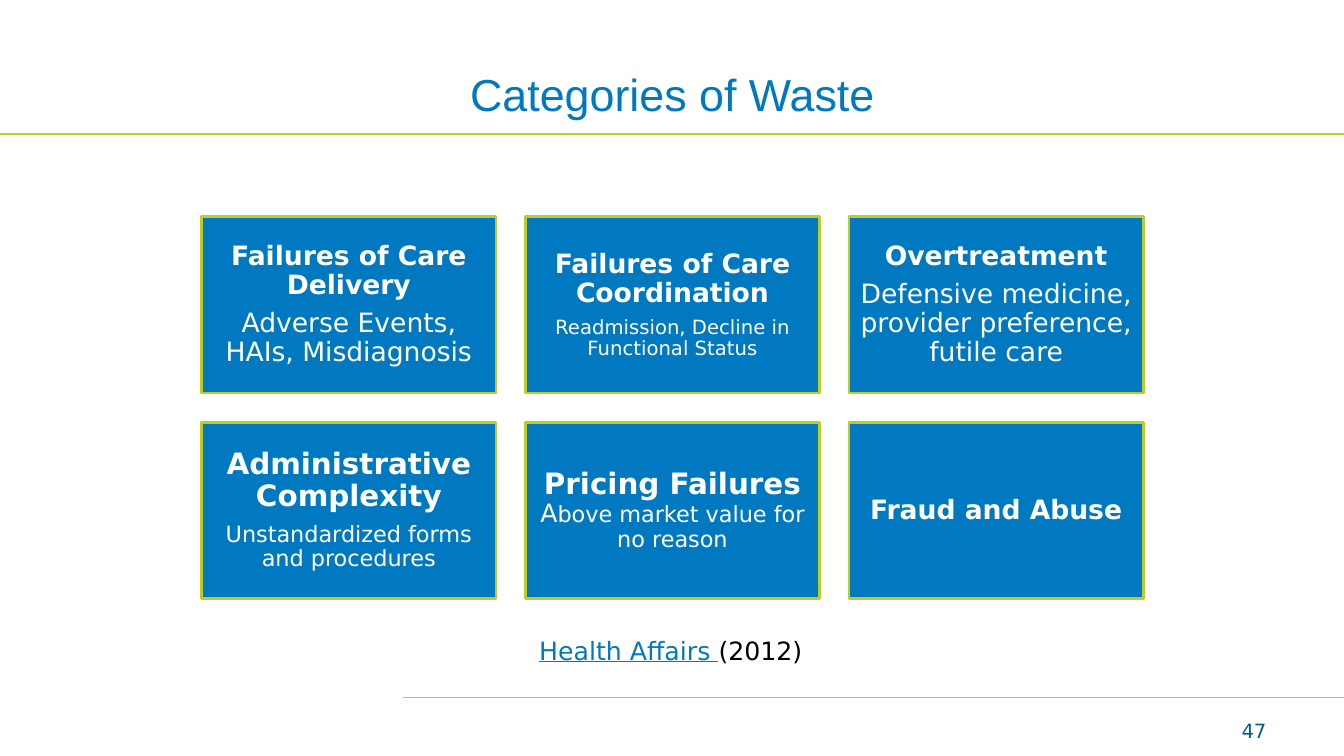
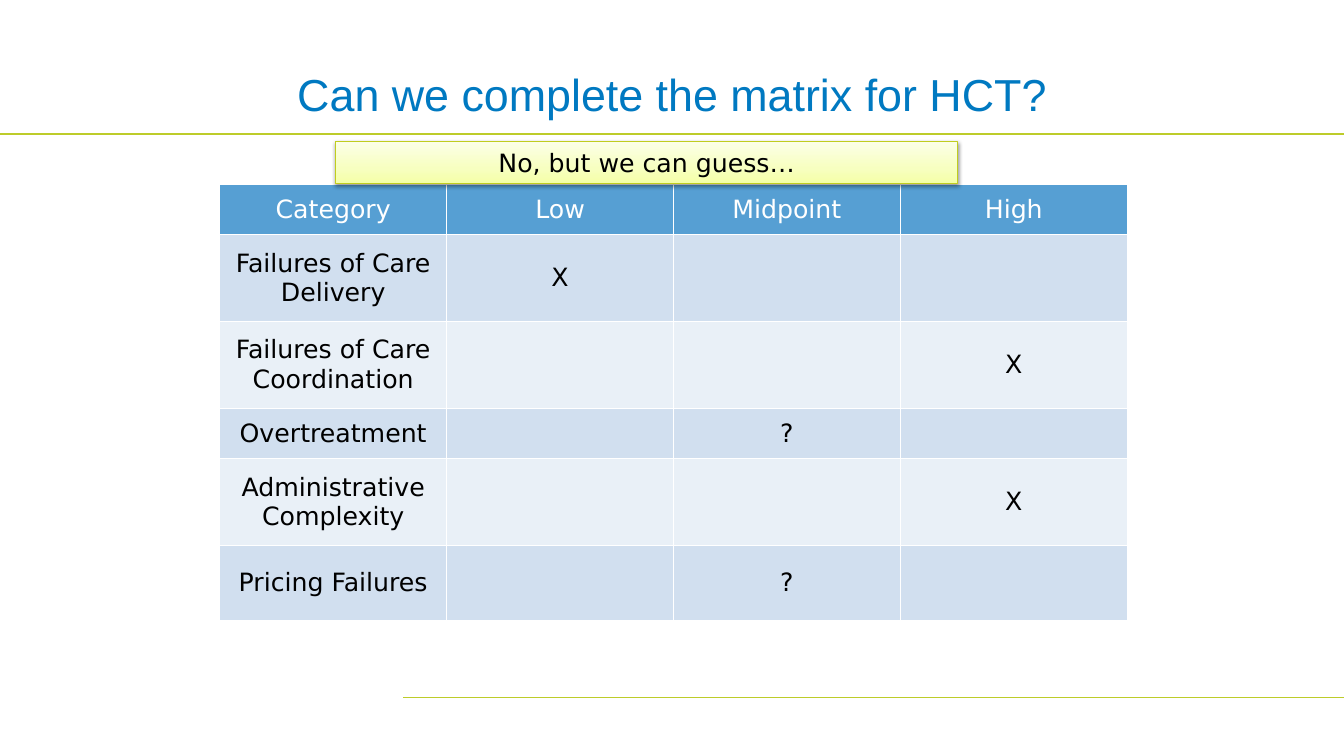
from lxml import etree
from pptx import Presentation
from pptx.dml.color import RGBColor
from pptx.enum.shapes import MSO_CONNECTOR, MSO_SHAPE
from pptx.enum.text import MSO_ANCHOR, PP_ALIGN
from pptx.oxml import parse_xml
from pptx.oxml.ns import nsdecls, qn
from pptx.util import Inches, Pt

W, H = 13.33, 7.5
TITLE_FONT, BODY_FONT = "Arial", "DejaVu Sans"
COLORS = {
    "blue": "0079C1", "lime": "BDCC2A", "number": "005C8A",
    "white": "FFFFFF", "black": "000000",
    "header": "569FD3", "band_dark": "D1DFEF", "band_light": "E9F0F7",
    "note_line": "C0CD1E",
}
NOTE_STOPS = [(0, "F5FFA6"), (35, "F7FFC0"), (100, "FCFFE7")]

# Each card is a list of paragraphs, each paragraph a list of (text, size, bold).
CARDS = [
    [[("Failures of Care Delivery", 19, True)],
     [("Adverse Events, HAIs, Misdiagnosis", 19, False)]],
    [[("Failures of Care Coordination", 19, True)],
     [("Readmission, Decline in Functional Status", 14, False)]],
    [[("Overtreatment", 19, True)],
     [("Defensive medicine, provider preference, futile care", 19, False)]],
    [[("Administrative Complexity", 21, True)],
     [("Unstandardized forms and procedures", 16, False)]],
    [[("Pricing Failures ", 21, True), ("A", 18, False),
      ("bove market value for no reason", 16, False)]],
    [[("Fraud and Abuse", 19, True)]],
]
CARD_COLS, CARD_W, CARD_H, CARD_GAP = 3, 2.92, 1.75, 0.29
CARDS_LEFT, CARDS_TOP = 2, 2.15

MATRIX = [
    ("Category", "Low", "Midpoint", "High"),
    ("Failures of Care Delivery", "X", "", ""),
    ("Failures of Care Coordination", "", "", "X"),
    ("Overtreatment", "", "?", ""),
    ("Administrative Complexity", "", "", "X"),
    ("Pricing Failures", "", "?", ""),
]
ROW_HEIGHTS = [0.5, 0.86, 0.86, 0.5, 0.86, 0.75]


def rgb(name):
    return RGBColor.from_string(COLORS[name])


def box(*lengths):
    return [Inches(v) for v in lengths]


def set_font(font, size, color, name=BODY_FONT, bold=False):
    font.size, font.name, font.bold = Pt(size), name, bold
    font.color.rgb = rgb(color)


def add_rule(slide, left, top):
    """Draw a thin lime line from left to the slide's right edge."""
    line = slide.shapes.add_connector(MSO_CONNECTOR.STRAIGHT, *box(left, top, W, top))
    line.line.color.rgb = rgb("lime")
    line.line.width = Pt(1)
    etree.SubElement(line.element.spPr, qn("a:effectLst"))


def add_slide(prs, title):
    slide = prs.slides.add_slide(prs.slide_layouts[5])
    add_rule(slide, 0, 1.33)
    add_rule(slide, W * 0.3, 6.92)
    sp = slide.shapes.title
    sp.left, sp.top, sp.width, sp.height = box(0.67, 0.25, 12, 1)
    sp.text_frame.vertical_anchor = MSO_ANCHOR.BOTTOM
    p = sp.text_frame.paragraphs[0]
    p.text, p.alignment = title, PP_ALIGN.CENTER
    set_font(p.font, 32, "blue", TITLE_FONT)
    return slide


def add_text(slide, at, runs, size, align=PP_ALIGN.LEFT):
    """Add a one-line text box; runs are (text, colour, underlined)."""
    tf = slide.shapes.add_textbox(*box(*at)).text_frame
    tf.word_wrap = True
    p = tf.paragraphs[0]
    p.alignment = align
    for text, color, underlined in runs:
        r = p.add_run()
        r.text = text
        set_font(r.font, size, color)
        r.font.underline = underlined


def add_rect(slide, at, line_color, line_width):
    sp = slide.shapes.add_shape(MSO_SHAPE.RECTANGLE, *box(*at))
    sp.shadow.inherit = False
    sp.line.color.rgb = rgb(line_color)
    sp.line.width = Pt(line_width)
    sp.text_frame.word_wrap = True
    sp.text_frame.vertical_anchor = MSO_ANCHOR.MIDDLE
    return sp


def add_card(slide, index, paragraphs):
    row, col = divmod(index, CARD_COLS)
    at = (CARDS_LEFT + col * (CARD_W + CARD_GAP),
          CARDS_TOP + row * (CARD_H + CARD_GAP), CARD_W, CARD_H)
    sp = add_rect(slide, at, "lime", 2)
    sp.fill.solid()
    sp.fill.fore_color.rgb = rgb("blue")
    tf = sp.text_frame
    tf.margin_left = tf.margin_right = tf.margin_top = tf.margin_bottom = Inches(0.08)
    for i, runs in enumerate(paragraphs):
        p = tf.add_paragraph() if i else tf.paragraphs[0]
        p.alignment, p.line_spacing = PP_ALIGN.CENTER, 0.9
        p.space_after = Pt(round(0.35 * runs[0][1], 1))
        for text, size, bold in runs:
            r = p.add_run()
            r.text = text
            set_font(r.font, size, "white", bold=bold)


def set_borders(cell):
    tc_pr = cell._tc.get_or_add_tcPr()
    for i, side in enumerate("LRTB"):
        tc_pr.insert(i, parse_xml(
            f'<a:ln{side} {nsdecls("a")} w="{Pt(1)}"><a:solidFill>'
            f'<a:srgbClr val="{COLORS["white"]}"/></a:solidFill></a:ln{side}>'))


def add_matrix(slide):
    table = slide.shapes.add_table(
        len(MATRIX), len(MATRIX[0]), *box(2.18, 1.83, 9, sum(ROW_HEIGHTS))).table
    for i, (texts, height) in enumerate(zip(MATRIX, ROW_HEIGHTS)):
        table.rows[i].height = Inches(height)
        fill = "header" if i == 0 else "band_dark" if i % 2 else "band_light"
        for cell, text in zip(table.rows[i].cells, texts):
            cell.fill.solid()
            cell.fill.fore_color.rgb = rgb(fill)
            set_borders(cell)
            cell.vertical_anchor = MSO_ANCHOR.MIDDLE
            p = cell.text_frame.paragraphs[0]
            p.text, p.alignment = text, PP_ALIGN.CENTER
            set_font(p.font, 18, "black" if i else "white")


def add_note(slide, text):
    """Add the shaded banner with a gradient and a soft shadow."""
    sp = add_rect(slide, (3.33, 1.4, 6.17, 0.42), "note_line", 0.75)
    sp.fill.gradient()
    sp.fill.gradient_angle = 90
    stops = sp.element.spPr.find(qn("a:gradFill")).find(qn("a:gsLst"))
    for stop in list(stops):
        stops.remove(stop)
    for share, color in NOTE_STOPS:
        stop = etree.SubElement(stops, qn("a:gs"), pos=str(share * 1000))
        etree.SubElement(stop, qn("a:srgbClr"), val=color)
    sp.element.spPr.find(qn("a:effectLst")).append(parse_xml(
        f'<a:outerShdw {nsdecls("a")} blurRad="{Pt(3.1)}" dist="{Pt(1.6)}" '
        f'dir="5400000" rotWithShape="0"><a:srgbClr val="{COLORS["black"]}">'
        '<a:alpha val="38000"/></a:srgbClr></a:outerShdw>'))
    p = sp.text_frame.paragraphs[0]
    p.text, p.alignment = text, PP_ALIGN.CENTER
    set_font(p.font, 18, "black")


def main():
    prs = Presentation()
    prs.slide_width, prs.slide_height = box(W, H)

    slide = add_slide(prs, "Categories of Waste")
    for i, paragraphs in enumerate(CARDS):
        add_card(slide, i, paragraphs)
    add_text(slide, (11.33, 7.08, 1.33, 0.42), [("47", "number", False)], 14, PP_ALIGN.RIGHT)
    add_text(slide, (5.25, 6.25, 3.33, 0.42),
             [("Health Affairs ", "blue", True), ("(2012)", "black", False)], 18)

    slide = add_slide(prs, "Can we complete the matrix for HCT?")
    add_matrix(slide)
    add_note(slide, "No, but we can guess…")

    prs.save("out.pptx")


if __name__ == "__main__":
    main()
